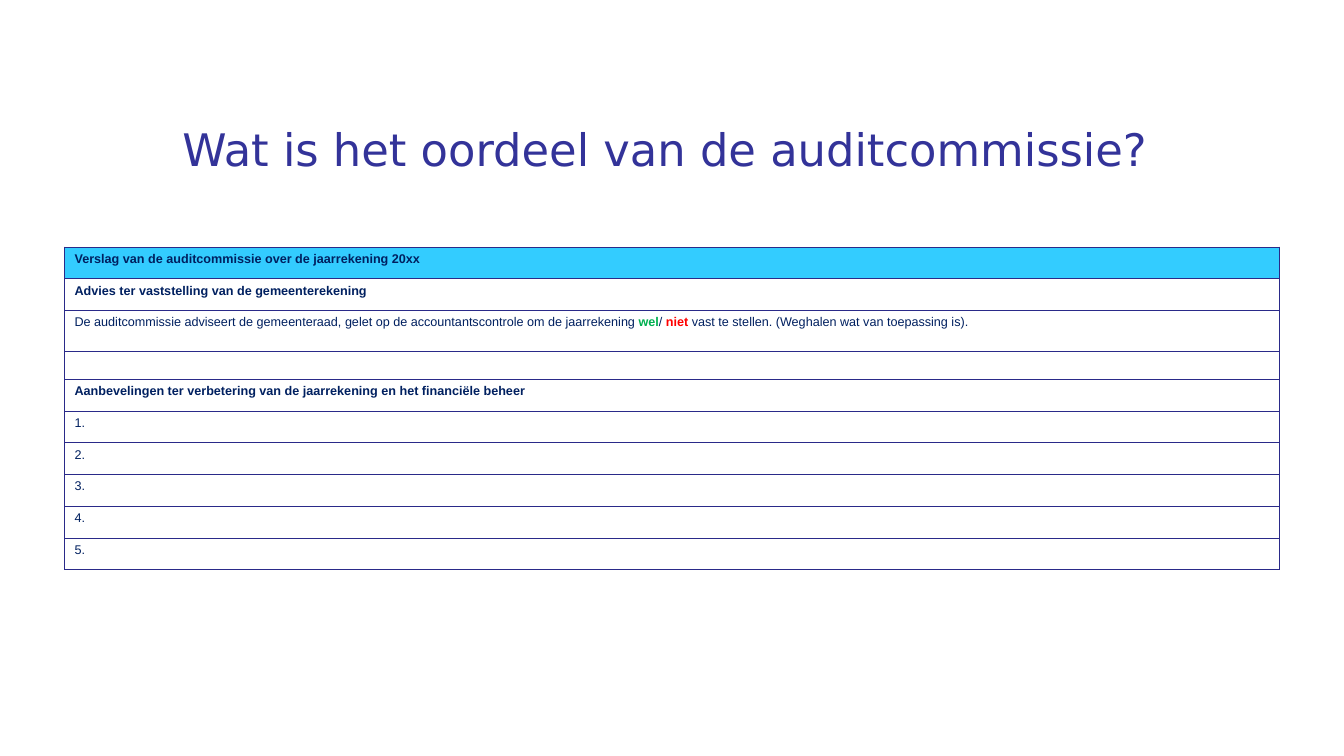
import lxml.etree
import pptx
import pptx.dml.color
import pptx.enum.text
import pptx.oxml.ns
import pptx.util

COLORS = {"title": "333399", "text": "002060", "border": "2A2A89",
          "header": "33CCFF", "yes": "00B050", "no": "FF0000"}


def color(name):
    """Return the named colour."""
    return pptx.dml.color.RGBColor.from_string(COLORS[name])


class Page:
    """Holds the slide and its style, measured on a grid of 100 by 100."""

    body_font, title_font = "Arial", "DejaVu Sans"
    body_size, title_size = 9, 32

    def __init__(self, deck):
        """Add a blank slide to the deck."""
        self.slide = deck.slides.add_slide(deck.slide_layouts[6])
        self.column = deck.slide_width / 100
        self.row = deck.slide_height / 100

    def frame(self, left, top, width, height):
        """Turn grid columns and rows into lengths."""
        return (round(left * self.column), round(top * self.row),
                round(width * self.column), round(height * self.row))

    def set_font(self, font, name, size, shade, bold=False):
        """Style a font."""
        font.name, font.size, font.bold = name, pptx.util.Pt(size), bold
        font.color.rgb = color(shade)

    def title(self, text, *place):
        """Add the slide title."""
        box = self.slide.shapes.add_textbox(*self.frame(*place))
        box.text_frame.word_wrap = True
        box.text_frame.vertical_anchor = pptx.enum.text.MSO_ANCHOR.MIDDLE
        para = box.text_frame.paragraphs[0]
        para.text = text
        self.set_font(para.font, self.title_font, self.title_size, "title")

    def table(self, place, widths, heights):
        """Add an unstyled table with the given column and row sizes."""
        shape = self.slide.shapes.add_table(
            len(heights), len(widths), *self.frame(*place))
        table = shape.table
        table.first_row = table.horz_banding = False
        for column, width in zip(table.columns, widths):
            column.width = round(width * self.column)
        for row, height in zip(table.rows, heights):
            row.height = round(height * self.row)
        return table

    def borders(self, cell, sides):
        """Draw the listed sides of a cell and hide the others."""
        properties = cell._tc.get_or_add_tcPr()
        for side in "LRTB":
            line = lxml.etree.SubElement(
                properties, pptx.oxml.ns.qn("a:ln" + side),
                w=str(pptx.util.Pt(0.75)))
            if side in sides:
                fill = lxml.etree.SubElement(line, pptx.oxml.ns.qn("a:solidFill"))
                lxml.etree.SubElement(
                    fill, pptx.oxml.ns.qn("a:srgbClr"), val=COLORS["border"])
            else:
                lxml.etree.SubElement(line, pptx.oxml.ns.qn("a:noFill"))

    def cell_text(self, cell, spans, bold):
        """Write (text, colour) spans; accented spans are bold."""
        para = cell.text_frame.paragraphs[0]
        for text, shade in spans:
            span = para.add_run()
            span.text = text
            if len(spans) > 1:
                self.set_font(span.font, self.body_font, self.body_size,
                              shade, shade != "text")
        if len(spans) == 1:
            self.set_font(para.font, self.body_font, self.body_size,
                          spans[0][1], bold)
        if not spans:
            lxml.etree.SubElement(para._p, pptx.oxml.ns.qn("a:endParaRPr"),
                                  sz=str(self.body_size * 100))

    def table_row(self, table, index, spans, merge, bold=False, fill=None):
        """Fill one row, merging the inclusive column range given."""
        last = len(table.columns) - 1
        first_merged, last_merged = merge
        table.cell(index, first_merged).merge(table.cell(index, last_merged))
        for number in range(last + 1):
            cell = table.cell(index, number)
            end = last_merged if number == first_merged else number
            self.borders(cell, "TB" + "L" * (number == 0) + "R" * (end == last))
            if fill:
                cell.fill.solid()
                cell.fill.fore_color.rgb = color(fill)
            else:
                cell.fill.background()
            self.cell_text(cell, spans if number == 0 else [], bold)


def main():
    """Build the slide and save it."""
    deck = pptx.Presentation()
    deck.slide_width = pptx.util.Inches(13.33)
    deck.slide_height = pptx.util.Inches(7.5)
    page = Page(deck)
    page.title("Wat is het oordeel van de auditcommissie?",
               12.83, 11.33, 83.72, 16.67)

    advice = [
        ("De auditcommissie adviseert de gemeenteraad, gelet op de "
         "accountantscontrole om de jaarrekening ", "text"),
        ("wel", "yes"), ("/ ", "text"), ("niet ", "no"),
        ("vast te stellen. (Weghalen wat van toepassing is).", "text")]
    whole, number_and_text, after_number = (0, 2), (0, 1), (1, 2)
    rows = [
        ([("Verslag van de auditcommissie over de jaarrekening 20xx", "text")],
         whole, True, "header"),
        ([("Advies ter vaststelling van de gemeenterekening", "text")],
         whole, True),
        (advice, whole),
        ([], whole),
        ([("Aanbevelingen ter verbetering van de jaarrekening en het "
           "financiële beheer", "text")], number_and_text, True)]
    rows += [([(f"{number}.", "text")], after_number) for number in range(1, 6)]

    regular, advice_height, gap_height = 4.2, 5.4, 3.7
    heights = [regular] * len(rows)
    heights[2:4] = advice_height, gap_height
    widths = [3.83, 37.81, 48.76]
    table = page.table((4.8, 32.67, sum(widths), sum(heights)), widths, heights)
    for index, row in enumerate(rows):
        page.table_row(table, index, *row)
    deck.save("out.pptx")


if __name__ == "__main__":
    main()
